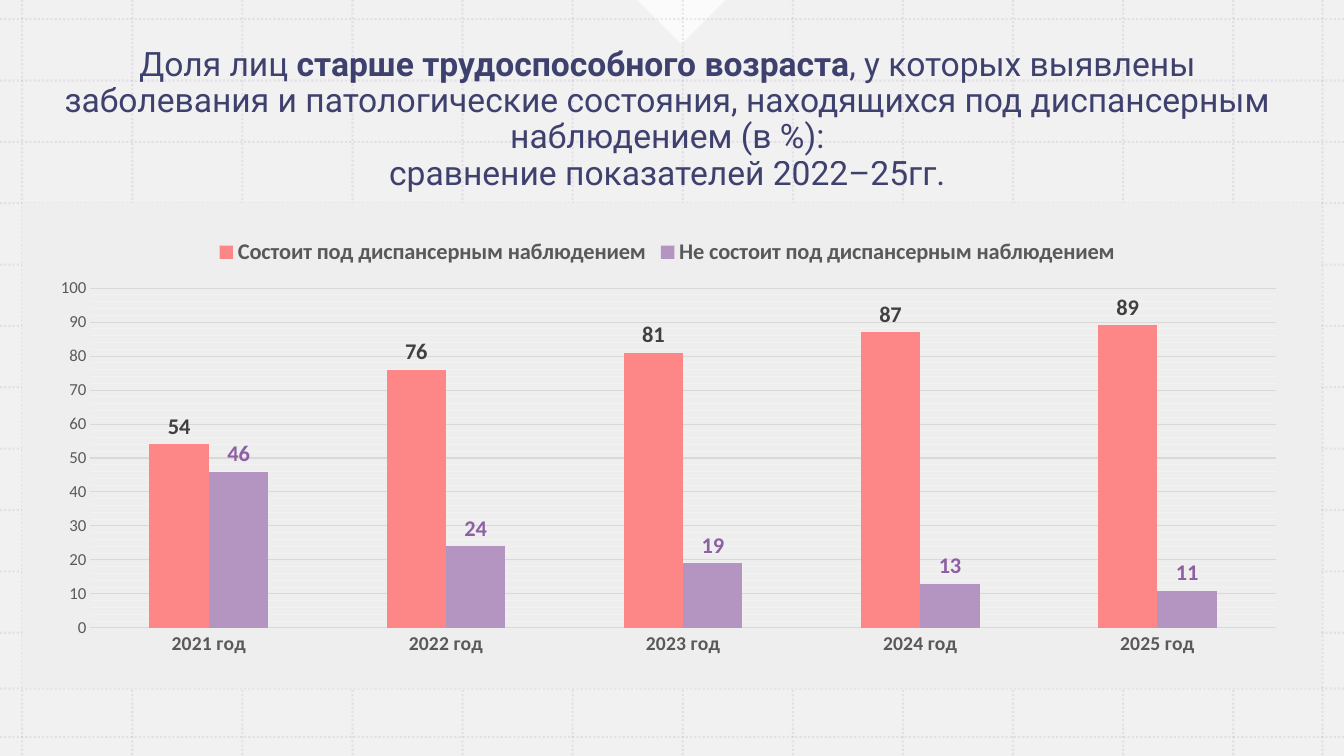
import pptx
import pptx.chart.data
import pptx.dml.color
import pptx.enum.chart
import pptx.enum.dml
import pptx.enum.shapes
import pptx.enum.text
import pptx.oxml
import pptx.oxml.ns
import pptx.util
from lxml import etree

COLS, ROWS = 120, 60
NS = pptx.oxml.ns.nsdecls("c", "a")


def paint(target, tone, alpha=100):
    """Give a fill or a font a solid colour, with opacity in percent."""
    fill = getattr(target, "fill", target)
    fill.solid()
    fill.fore_color.rgb = pptx.dml.color.RGBColor.from_string(tone)
    if alpha < 100:
        for node in fill._xPr.iter(pptx.oxml.ns.qn("a:srgbClr")):
            etree.SubElement(node, pptx.oxml.ns.qn("a:alpha"), val=str(alpha * 1000))


class Deck:
    head, body = "Roboto", "Calibri"
    ink, grey, rule, mesh, back = "12154E", "595959", "D9D9D9", "B495C2", "EEEEEE"
    faint = "F2F2F2"

    def __init__(self):
        self.show = pptx.Presentation()
        self.show.slide_width = pptx.util.Inches(13.33)
        self.show.slide_height = pptx.util.Inches(7.5)
        self.slide = self.show.slides.add_slide(self.show.slide_layouts[6])
        paint(self.slide.background.fill, "F1F1F1")

    def place(self, col, row):
        return (round(self.show.slide_width * col / COLS),
                round(self.show.slide_height * row / ROWS))

    def box(self, col, row, wide, high):
        return (*self.place(col, row), *self.place(wide, high))

    def style(self, font, size, tone, bold=False, face=None, alpha=100):
        font.name, font.size, font.bold = face or self.body, pptx.util.Pt(size), bold
        paint(font, tone, alpha)

    def shape(self, kind, area, tone, alpha=100, turn=0):
        item = self.slide.shapes.add_shape(kind, *self.box(*area))
        item.shadow.inherit = False
        item.rotation = turn
        item.line.fill.background()
        paint(item.fill, tone, alpha)

    def line(self, start, end):
        item = self.slide.shapes.add_connector(
            pptx.enum.shapes.MSO_CONNECTOR.STRAIGHT, *self.place(*start), *self.place(*end))
        item.line.width = pptx.util.Pt(1.5)
        paint(item.line, self.mesh, 20)
        item.line.dash_style = pptx.enum.dml.MSO_LINE.ROUND_DOT
        etree.SubElement(item._element.spPr, pptx.oxml.ns.qn("a:effectLst"))

    def title(self, area, lines):
        frame = self.slide.shapes.add_textbox(*self.box(*area)).text_frame
        frame.word_wrap = True
        frame.vertical_anchor = pptx.enum.text.MSO_ANCHOR.MIDDLE
        para = frame.paragraphs[0]
        para.alignment = pptx.enum.text.PP_ALIGN.CENTER
        para.line_spacing = 0.9
        for i, line in enumerate(lines):
            if i:
                para.add_line_break()
            for text, bold in line:
                run = para.add_run()
                run.text = text
                self.style(run.font, 24, self.ink, bold, self.head, 80)

    def chart(self, area, cats, series):
        data = pptx.chart.data.CategoryChartData()
        data.categories = cats
        for name, values, tone, mark in series:
            data.add_series(name, values)
        chart = self.slide.shapes.add_chart(
            pptx.enum.chart.XL_CHART_TYPE.COLUMN_CLUSTERED, *self.box(*area), data).chart
        self.style(chart.font, 10, "000000")
        chart.has_title = False
        chart.has_legend = True
        chart.legend.position = pptx.enum.chart.XL_LEGEND_POSITION.TOP
        chart.legend.include_in_layout = False
        self.style(chart.legend.font, 16, self.grey, True)
        self.axes(chart)

        # Columns and their values
        plot = chart.plots[0]
        plot.vary_by_categories = False
        plot.gap_width, plot.overlap = 199, 0
        for bars, (name, values, tone, mark) in zip(plot.series, series):
            paint(bars.format, tone)
            bars.invert_if_negative = False
            labels = bars.data_labels
            labels.show_value = True
            labels.position = pptx.enum.chart.XL_LABEL_POSITION.OUTSIDE_END
            self.style(labels.font, 16, mark, True)

        # Plot area, as shares of the chart
        spots = "".join(f'<c:{key} val="{share}"/>' for key, share in
                        (("x", 0.045), ("y", 0.14), ("w", 0.935), ("h", 0.775)))
        inner = pptx.oxml.parse_xml(
            f'<c:layout {NS}><c:manualLayout><c:layoutTarget val="inner"/>'
            f'<c:xMode val="edge"/><c:yMode val="edge"/>{spots}</c:manualLayout></c:layout>')
        zone = chart._chartSpace.chart.plotArea
        for old in zone.findall(pptx.oxml.ns.qn("c:layout")):
            zone.remove(old)
        zone.insert(0, inner)

    def axes(self, chart):
        base, scale = chart.category_axis, chart.value_axis
        for axis, size, bold in ((base, 14, True), (scale, 12, False)):
            axis.major_tick_mark = pptx.enum.chart.XL_TICK_MARK.NONE
            axis.minor_tick_mark = pptx.enum.chart.XL_TICK_MARK.NONE
            self.style(axis.tick_labels.font, size, self.grey, bold)
        scale.minimum_scale, scale.maximum_scale = 0, 100
        scale.major_unit, scale.minor_unit = 10, 2
        scale.has_major_gridlines = scale.has_minor_gridlines = True
        scale.format.line.fill.background()
        for item in (base, scale.major_gridlines):
            item.format.line.width = pptx.util.Pt(0.75)
            paint(item.format.line, self.rule)

        # Faint minor gridlines
        minor = scale._element.find(pptx.oxml.ns.qn("c:minorGridlines"))
        minor.append(pptx.oxml.parse_xml(
            f'<c:spPr {NS}><a:ln w="{pptx.util.Pt(0.75)}"><a:solidFill>'
            f'<a:srgbClr val="{self.faint}"/></a:solidFill></a:ln></c:spPr>'))


def main():
    deck = Deck()
    kinds = pptx.enum.shapes.MSO_SHAPE

    # Top marker
    deck.shape(kinds.RIGHT_TRIANGLE, (58.05, -2.48, 5.58, 4.96), "FFFFFF", 75, 315)

    # Dotted mesh
    for col in [1.98 + 9.83 * i for i in range(12)] + [118.08]:
        deck.line((col, 0), (col, ROWS))
    for row in [1.52 + 4.87 * i for i in range(11)] + [54.64, 58.48]:
        deck.line((0, row), (COLS, row))

    # Panel
    deck.shape(kinds.RECTANGLE, (1.98, 16.08, 116.01, 38.56), deck.back)

    # Heading
    deck.title((2.97, 2.96, 113.22, 13.12), [
        [("Доля лиц ", False), ("старше трудоспособного возраста", True),
         (", у которых выявлены заболевания и патологические состояния, "
          "находящихся под диспансерным наблюдением (в %):", False)],
        [("сравнение показателей 2022–25гг.", False)]])

    # Shares by year
    deck.chart((2.97, 18, 113.22, 34.8), [f"{year} год" for year in range(2021, 2026)], [
        ("Состоит под диспансерным наблюдением", (54, 76, 81, 87, 89), "FD8686", "404040"),
        ("Не состоит под диспансерным наблюдением", (46, 24, 19, 13, 11), "B495C2", "8D5FA3")])

    deck.show.save("out.pptx")


if __name__ == "__main__":
    main()
